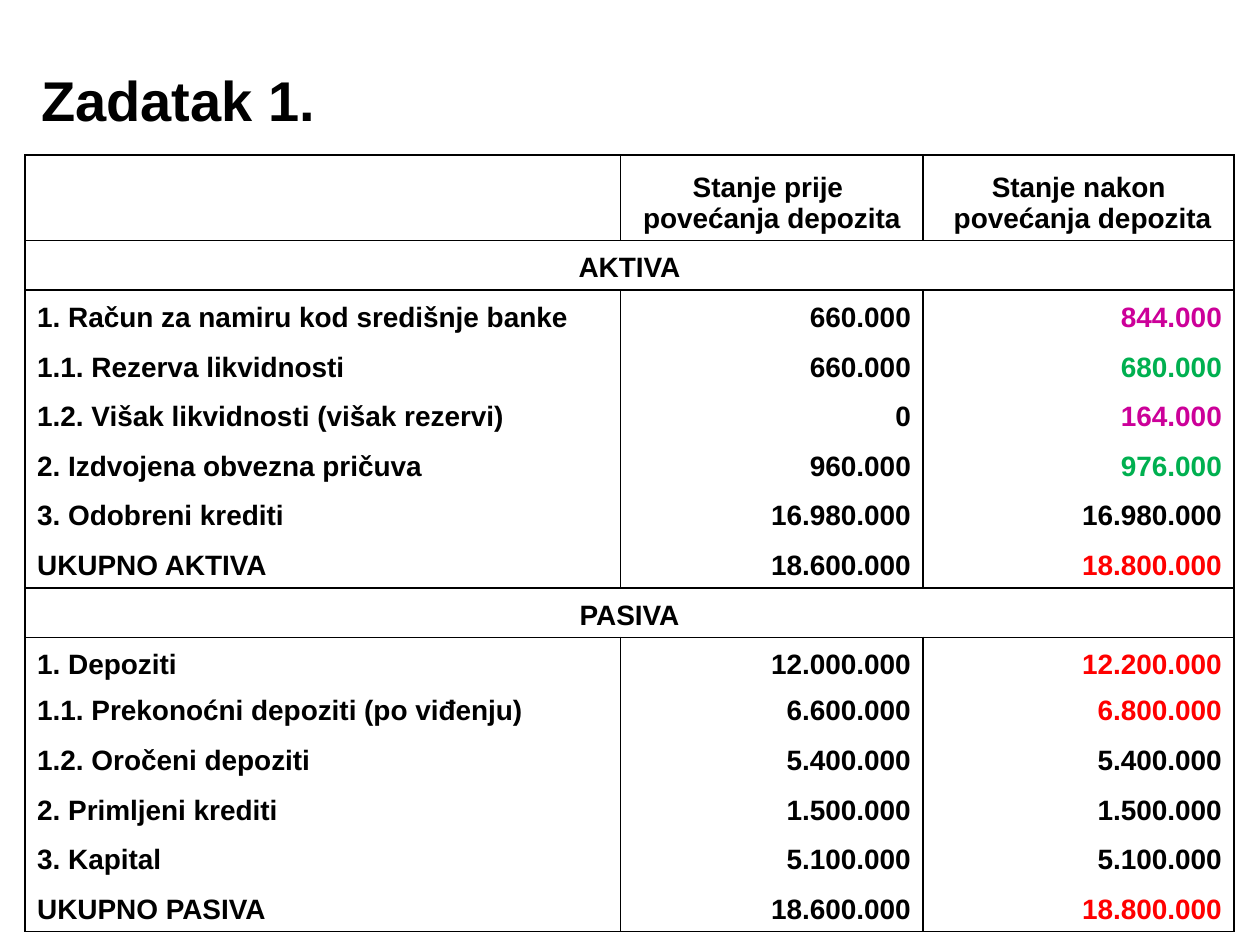
"""Build a slide with a bank balance sheet before and after a rise in deposits."""
from typing import NamedTuple

from lxml import etree
from pptx import Presentation
from pptx.dml.color import RGBColor
from pptx.enum.text import MSO_ANCHOR, MSO_AUTO_SIZE, PP_ALIGN
from pptx.oxml.ns import qn
from pptx.util import Cm, Pt

LEFT, CENTER, RIGHT = PP_ALIGN.LEFT, PP_ALIGN.CENTER, PP_ALIGN.RIGHT
BOTTOM = MSO_ANCHOR.BOTTOM
FIT_SHAPE = MSO_AUTO_SIZE.SHAPE_TO_FIT_TEXT

BLACK = RGBColor(0x00, 0x00, 0x00)
WHITE = RGBColor(0xFF, 0xFF, 0xFF)
MAGENTA = RGBColor(0xCC, 0x00, 0x99)
GREEN = RGBColor(0x00, 0xB0, 0x50)
RED = RGBColor(0xFF, 0x00, 0x00)

FONT = "Arial"
COLUMN_WIDTHS = (12.01, 6.1, 6.27)
HEADER_HEIGHT, ROW_HEIGHT, OVERNIGHT_HEIGHT = 1.73, 1.0, 0.93
HEADERS = ("", "Stanje prije \npovećanja depozita", "Stanje nakon\n povećanja depozita")


class Item(NamedTuple):
    label: str
    before: str
    after: str
    color: RGBColor = BLACK
    height: float = ROW_HEIGHT


class Section(NamedTuple):
    title: str
    items: tuple[Item, ...]


SECTIONS = (
    Section("AKTIVA", (
        Item("1. Račun za namiru kod središnje banke", "660.000", "844.000", MAGENTA),
        Item("1.1. Rezerva likvidnosti", "660.000", "680.000", GREEN),
        Item("1.2. Višak likvidnosti (višak rezervi)", "0", "164.000", MAGENTA),
        Item("2. Izdvojena obvezna pričuva", "960.000", "976.000", GREEN),
        Item("3. Odobreni krediti", "16.980.000", "16.980.000"),
        Item("UKUPNO AKTIVA", "18.600.000", "18.800.000", RED),
    )),
    Section("PASIVA", (
        Item("1. Depoziti", "12.000.000", "12.200.000", RED),
        Item("1.1. Prekonoćni depoziti (po viđenju)", "6.600.000", "6.800.000", RED,
             OVERNIGHT_HEIGHT),
        Item("1.2. Oročeni depoziti", "5.400.000", "5.400.000"),
        Item("2. Primljeni krediti", "1.500.000", "1.500.000"),
        Item("3. Kapital", "5.100.000", "5.100.000"),
        Item("UKUPNO PASIVA", "18.600.000", "18.800.000", RED),
    )),
)


def set_text(tf, text: str, size: int, align: PP_ALIGN, color: RGBColor = BLACK) -> None:
    """Write bold text, one paragraph a line."""
    tf.text = text
    for p in tf.paragraphs:
        p.alignment = align
        p.font.name, p.font.size, p.font.bold = FONT, Pt(size), True
        p.font.color.rgb = color


def style_cell(cell, sides: str) -> None:
    """Draw the named sides of a cell in black and fill it white."""
    tc_pr = cell._tc.get_or_add_tcPr()
    for side in "LRTB":
        ln = etree.SubElement(tc_pr, qn(f"a:ln{side}"), w=str(Pt(1)))
        if side in sides:
            fill = etree.SubElement(ln, qn("a:solidFill"))
            etree.SubElement(fill, qn("a:srgbClr"), val=str(BLACK))
        else:
            etree.SubElement(ln, qn("a:noFill"))
    cell.fill.solid()
    cell.fill.fore_color.rgb = WHITE
    cell.vertical_anchor = BOTTOM
    cell.margin_left = cell.margin_right = Cm(0.25)
    cell.margin_top = cell.margin_bottom = Cm(0.13)


def add_section(table, top: int, section: Section) -> int:
    """Fill a title row and its items, and return the next free row."""
    for cell in table.rows[top].cells:
        style_cell(cell, "LRTB")
    title = table.cell(top, 0)
    title.merge(table.cell(top, len(COLUMN_WIDTHS) - 1))
    set_text(title.text_frame, section.title, 16, CENTER)
    last = top + len(section.items)
    for row, item in enumerate(section.items, top + 1):
        table.rows[row].height = Cm(item.height)
        sides = "LR" + "T" * (row == top + 1) + "B" * (row == last)
        entries = ((item.label, LEFT, BLACK), (item.before, RIGHT, BLACK),
                   (item.after, RIGHT, item.color))
        for cell, (text, align, color) in zip(table.rows[row].cells, entries):
            style_cell(cell, sides)
            set_text(cell.text_frame, text, 16, align, color)
    return last + 1


def add_balance_sheet(s) -> None:
    """Add the table of assets and liabilities."""
    count = 1 + sum(1 + len(section.items) for section in SECTIONS)
    height = HEADER_HEIGHT + (count - 1) * ROW_HEIGHT
    table = s.shapes.add_table(count, len(COLUMN_WIDTHS), Cm(0.5), Cm(3.12),
                               Cm(sum(COLUMN_WIDTHS)), Cm(height)).table
    table.first_row = table.horz_banding = False
    for column, width in zip(table.columns, COLUMN_WIDTHS):
        column.width = Cm(width)
    for row in table.rows:
        row.height = Cm(ROW_HEIGHT)
    table.rows[0].height = Cm(HEADER_HEIGHT)
    for cell, text in zip(table.rows[0].cells, HEADERS):
        style_cell(cell, "LRTB")
        set_text(cell.text_frame, text, 16, CENTER)
    top = 1
    for section in SECTIONS:
        top = add_section(table, top, section)


def add_title(s) -> None:
    """Add the slide heading."""
    tf = s.shapes.add_textbox(Cm(0.58), Cm(1.19), Cm(6.07), Cm(1.63)).text_frame
    tf.word_wrap = False
    tf.auto_size = FIT_SHAPE
    set_text(tf, "Zadatak 1.", 32, LEFT)


def main() -> None:
    """Build and save the presentation."""
    prs = Presentation()
    prs.slide_width, prs.slide_height = Cm(25.4), Cm(19.05)
    s = prs.slides.add_slide(prs.slide_layouts[6])
    add_balance_sheet(s)
    add_title(s)
    prs.save("out.pptx")


if __name__ == "__main__":
    main()
